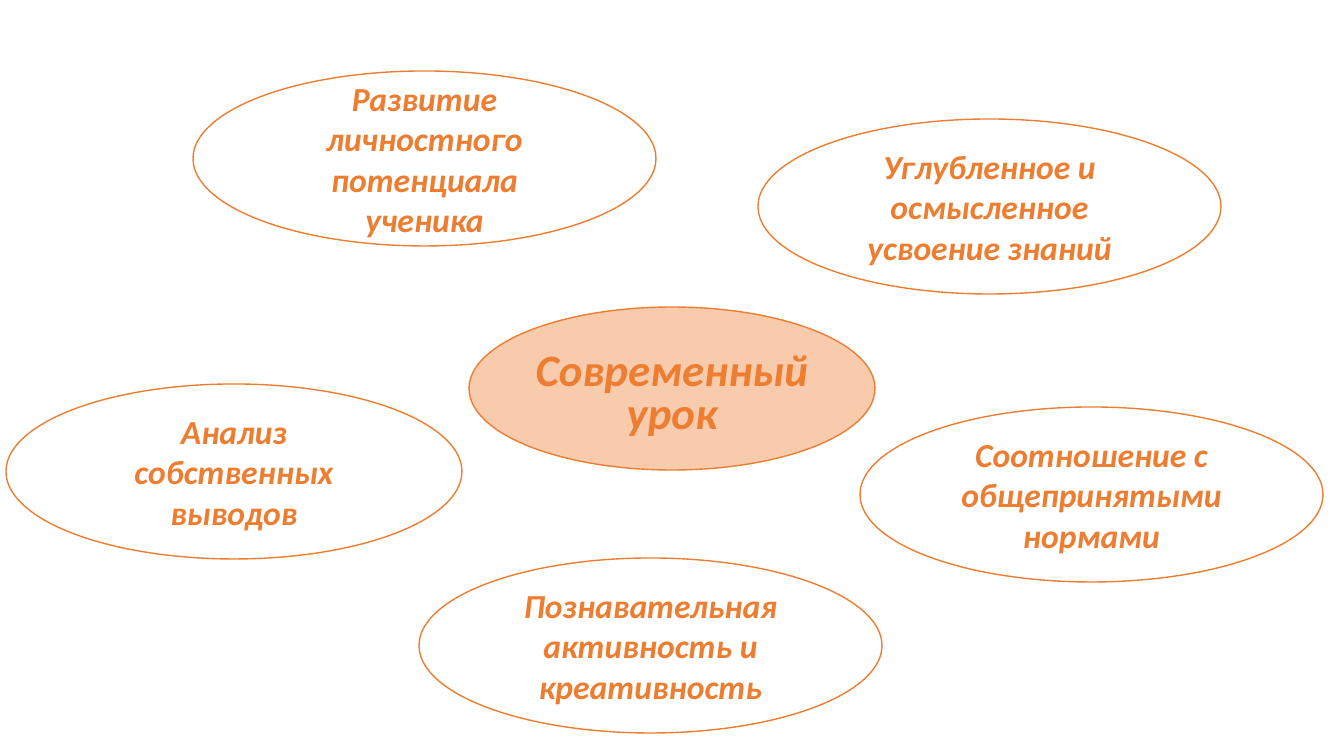
from pptx import Presentation
from pptx.dml.color import RGBColor
from pptx.enum.shapes import MSO_SHAPE
from pptx.enum.text import MSO_ANCHOR, PP_ALIGN
from pptx.util import Emu, Pt

OVAL = MSO_SHAPE.OVAL
MIDDLE = MSO_ANCHOR.MIDDLE
CENTER = PP_ALIGN.CENTER

ORANGE = RGBColor(0xED, 0x7D, 0x31)
PEACH = RGBColor(0xF8, 0xCB, 0xAD)
WHITE = RGBColor(0xFF, 0xFF, 0xFF)

PX_PER_INCH = 100.8
PAGE_SIZE = (1344, 756)
GOAL_WIDTH, GOAL_HEIGHT = 463, 175

TOPIC_FORMAT = {"name": "Calibri", "bold": True, "italic": True, "size": Pt(32)}
GOAL_FORMAT = {**TOPIC_FORMAT, "size": Pt(24)}
TOPIC_INSETS = {"margin_left": 0, "margin_top": 14, "margin_right": 0, "margin_bottom": 0}

# Left, top, width, text
GOALS = [
    (193, 71, GOAL_WIDTH, "Развитие личностного потенциала ученика"),
    (758, 119, GOAL_WIDTH, "Углубленное и осмысленное усвоение знаний"),
    (6, 384, 456, "Анализ собственных выводов"),
    (860, 407, GOAL_WIDTH, "Соотношение с общепринятыми нормами"),
    (419, 558, GOAL_WIDTH, "Познавательная активность и креативность"),
]


def px(length):
    return Emu(round(length * 914400 / PX_PER_INCH))


def add_bubble(page, bounds, text, fill, font_format):
    """Draw an outlined ellipse with centred text and return it."""
    bubble = page.shapes.add_shape(OVAL, *map(px, bounds))
    bubble.shadow.inherit = False
    bubble.fill.solid()
    bubble.fill.fore_color.rgb = fill
    bubble.line.color.rgb = ORANGE
    bubble.line.width = Pt(1)

    frame = bubble.text_frame
    frame.word_wrap = True
    frame.vertical_anchor = MIDDLE
    para = frame.paragraphs[0]
    para.alignment = CENTER
    span = para.add_run()
    span.text = text
    for name, value in font_format.items():
        setattr(span.font, name, value)
    span.font.color.rgb = ORANGE
    return bubble


def add_topic(page):
    topic = add_bubble(page, (469, 307, 406, 163), "Современный урок", PEACH, TOPIC_FORMAT)
    for name, inset in TOPIC_INSETS.items():
        setattr(topic.text_frame, name, px(inset))
    topic.text_frame.paragraphs[0].line_spacing = 0.8


def main():
    deck = Presentation()
    deck.slide_width, deck.slide_height = map(px, PAGE_SIZE)
    page = deck.slides.add_slide(deck.slide_layouts[6])
    add_topic(page)
    for left, top, width, text in GOALS:
        add_bubble(page, (left, top, width, GOAL_HEIGHT), text, WHITE, GOAL_FORMAT)
    deck.save("out.pptx")


if __name__ == "__main__":
    main()
